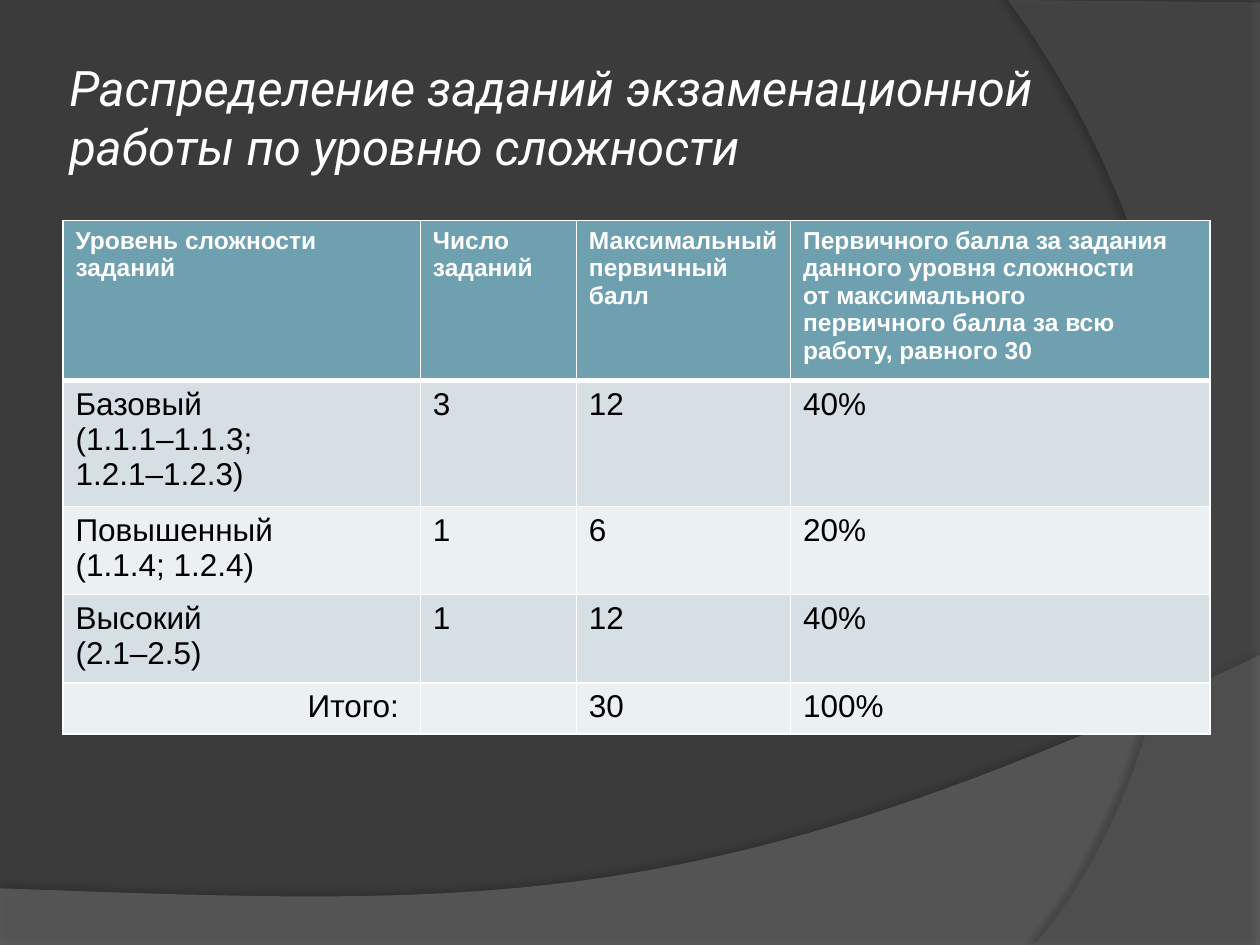
from lxml import etree
from pptx import Presentation
from pptx.dml.color import RGBColor
from pptx.enum.text import MSO_ANCHOR, PP_ALIGN
from pptx.oxml import parse_xml
from pptx.oxml.ns import qn
from pptx.util import Pt

MIDDLE = MSO_ANCHOR.MIDDLE
LEFT, RIGHT = PP_ALIGN.LEFT, PP_ALIGN.RIGHT
DRAWING_NS = "http://schemas.openxmlformats.org/drawingml/2006/main"

BACKGROUND = RGBColor(0x3B, 0x3B, 0x3B)
WAVE_GRAY = RGBColor(0x7F, 0x7F, 0x7F)
ARC_GRAY = RGBColor(0x5E, 0x5E, 0x5E)
WHITE = RGBColor(0xFF, 0xFF, 0xFF)
BLACK = RGBColor(0, 0, 0)
HEADER_FILL = RGBColor(0x6E, 0xA0, 0xB0)
BAND_FILLS = (RGBColor(0xD5, 0xDF, 0xE4), RGBColor(0xEB, 0xF0, 0xF2))

# Content; a line break in a cell starts a new paragraph
TITLE = "Распределение заданий экзаменационной работы по уровню сложности"
ROWS = [
    ("Уровень сложности\nзаданий", "Число\nзаданий",
     "Максимальный\nпервичный\nбалл",
     "Первичного балла за задания\nданного уровня сложности\n"
     "от максимального\nпервичного балла за всю\nработу, равного 30"),
    ("Базовый\n(1.1.1–1.1.3;\n1.2.1–1.2.3)", "3", "12", "40%"),
    ("Повышенный\n(1.1.4; 1.2.4)", "1", "6", "20%"),
    ("Высокий\n(2.1–2.5)", "1", "12", "40%"),
    ("Итого: ", "", "30", "100%"),
]
COLUMN_WIDTHS = (204.2, 89.2, 122.4, 239.8)
ROW_HEIGHT = 29.2  # a minimum: rows grow with their text

# Backdrop: straight corners, then a Bezier curve from the last corner
BACKDROP = [
    {"corners": [(0, 507.6), (0, 540.7), (720, 540.7), (720, 374.4)],
     "curve": [(402.5, 524.9), (281.5, 517.7), (0, 507.6)],
     "color": WAVE_GRAY, "opacity": 45,
     "shadow": {"opacity": 35, "blur": 4, "distance": 3.5, "angle": 270}},
    {"corners": [(720, 1.4), (720, 540), (591.1, 540)],
     "curve": [(673.2, 445.7), (733, 216), (576, 0)],
     "color": ARC_GRAY, "opacity": 40,
     "shadow": {"opacity": 45, "blur": 4, "distance": 4, "angle": 180}},
]


def bend_last_segment(shape, curve):
    """Turn the last straight segment of a freeform into a Bezier curve."""
    segment = list(shape._element.iter(qn("a:lnTo")))[-1]
    bend = etree.Element(qn("a:cubicBezTo"))
    for x, y in curve:
        etree.SubElement(bend, qn("a:pt"),
                         x=str(Pt(x) - shape.left), y=str(Pt(y) - shape.top))
    segment.getparent().replace(segment, bend)


def add_backdrop(page, corners, curve, color, opacity, shadow):
    points = [(Pt(x), Pt(y)) for x, y in corners + curve[-1:]]
    builder = page.shapes.build_freeform(*points[0])
    builder.add_line_segments(points[1:], close=True)
    shape = builder.convert_to_shape()
    bend_last_segment(shape, curve)
    shape.line.fill.background()
    shape.fill.solid()
    shape.fill.fore_color.rgb = color
    properties = shape._element.spPr
    fill_color = properties.find(qn("a:solidFill"))[0]
    etree.SubElement(fill_color, qn("a:alpha"), val=str(opacity * 1000))
    properties.append(parse_xml(
        f'<a:effectLst xmlns:a="{DRAWING_NS}">'
        f'<a:outerShdw blurRad="{Pt(shadow["blur"])}" dist="{Pt(shadow["distance"])}" '
        f'dir="{shadow["angle"] * 60000}" algn="ctr" rotWithShape="0">'
        f'<a:srgbClr val="{BLACK}"><a:alpha val="{shadow["opacity"] * 1000}"/></a:srgbClr>'
        '</a:outerShdw></a:effectLst>'))


def add_title(page):
    box = page.shapes.add_textbox(Pt(36), Pt(21.6), Pt(644.4), Pt(90))
    frame = box.text_frame
    frame.word_wrap = True
    frame.vertical_anchor = MIDDLE
    frame.margin_left = frame.margin_right = Pt(3.6)
    para = frame.paragraphs[0]
    para.text = TITLE
    font = para.font
    font.name, font.size, font.italic = "Roboto", Pt(28), True
    font.color.rgb = WHITE


def set_borders(cell, top, bottom):
    properties = cell._tc.get_or_add_tcPr()
    for side, width in (("L", 1), ("R", 1), ("T", top), ("B", bottom)):
        properties.append(parse_xml(
            f'<a:ln{side} xmlns:a="{DRAWING_NS}" w="{Pt(width)}">'
            f'<a:solidFill><a:srgbClr val="{WHITE}"/></a:solidFill></a:ln{side}>'))


def fill_cell(cell, text, row):
    is_header = row == 0
    set_borders(cell, top=3 if row == 1 else 1, bottom=3 if is_header else 1)
    cell.fill.solid()
    cell.fill.fore_color.rgb = HEADER_FILL if is_header else BAND_FILLS[(row - 1) % 2]
    cell.text = text
    for para in cell.text_frame.paragraphs:
        para.alignment = RIGHT if text.startswith("Итого") else LEFT
        font = para.font
        font.name, font.bold = "Arial", is_header
        font.size = Pt(14 if is_header else 18)
        font.color.rgb = WHITE if is_header else BLACK


def add_levels_table(page):
    table = page.shapes.add_table(
        len(ROWS), len(COLUMN_WIDTHS), Pt(36), Pt(126),
        Pt(sum(COLUMN_WIDTHS)), Pt(ROW_HEIGHT * len(ROWS))).table
    for column, width in zip(table.columns, COLUMN_WIDTHS):
        column.width = Pt(width)
    for row, texts in enumerate(ROWS):
        for column, text in enumerate(texts):
            fill_cell(table.cell(row, column), text, row)


def main():
    deck = Presentation()
    deck.slide_width, deck.slide_height = Pt(720), Pt(540)
    page = deck.slides.add_slide(deck.slide_layouts[6])
    page.background.fill.solid()
    page.background.fill.fore_color.rgb = BACKGROUND
    for part in BACKDROP:
        add_backdrop(page, **part)
    add_title(page)
    add_levels_table(page)
    deck.save("out.pptx")


if __name__ == "__main__":
    main()
